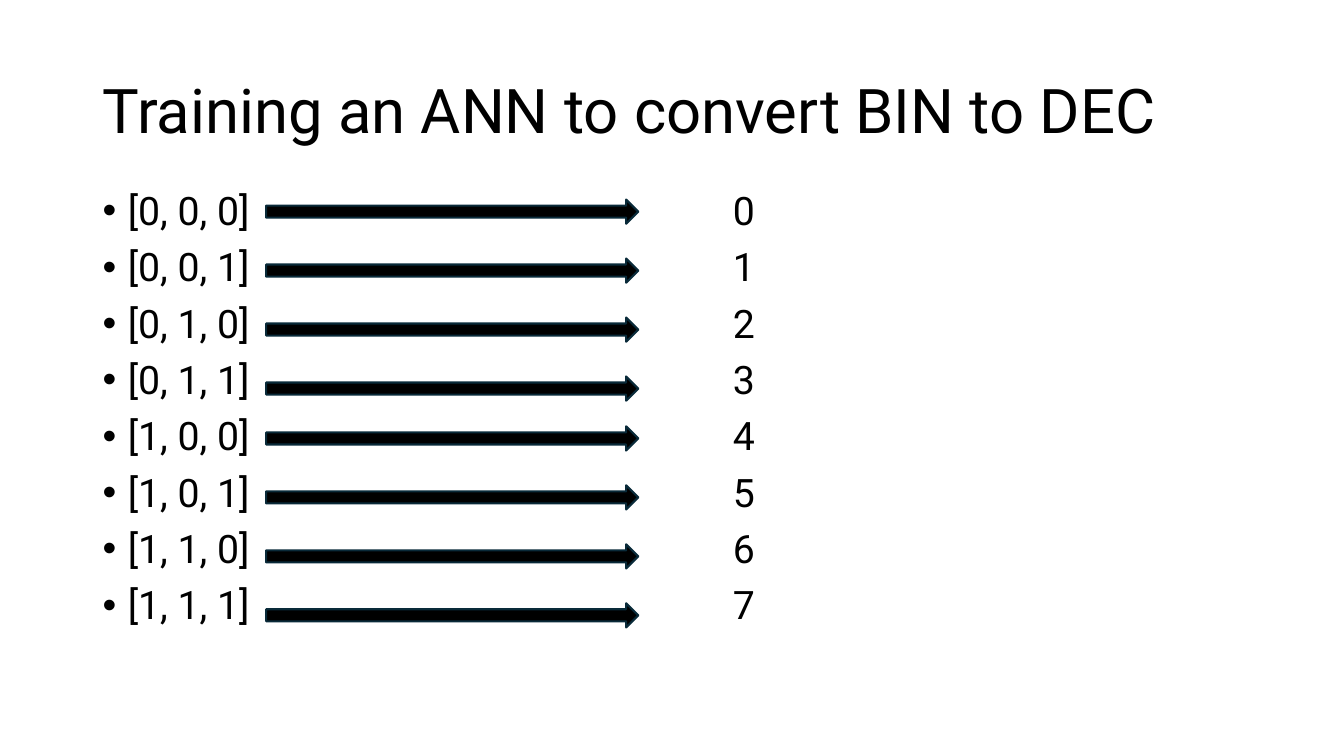
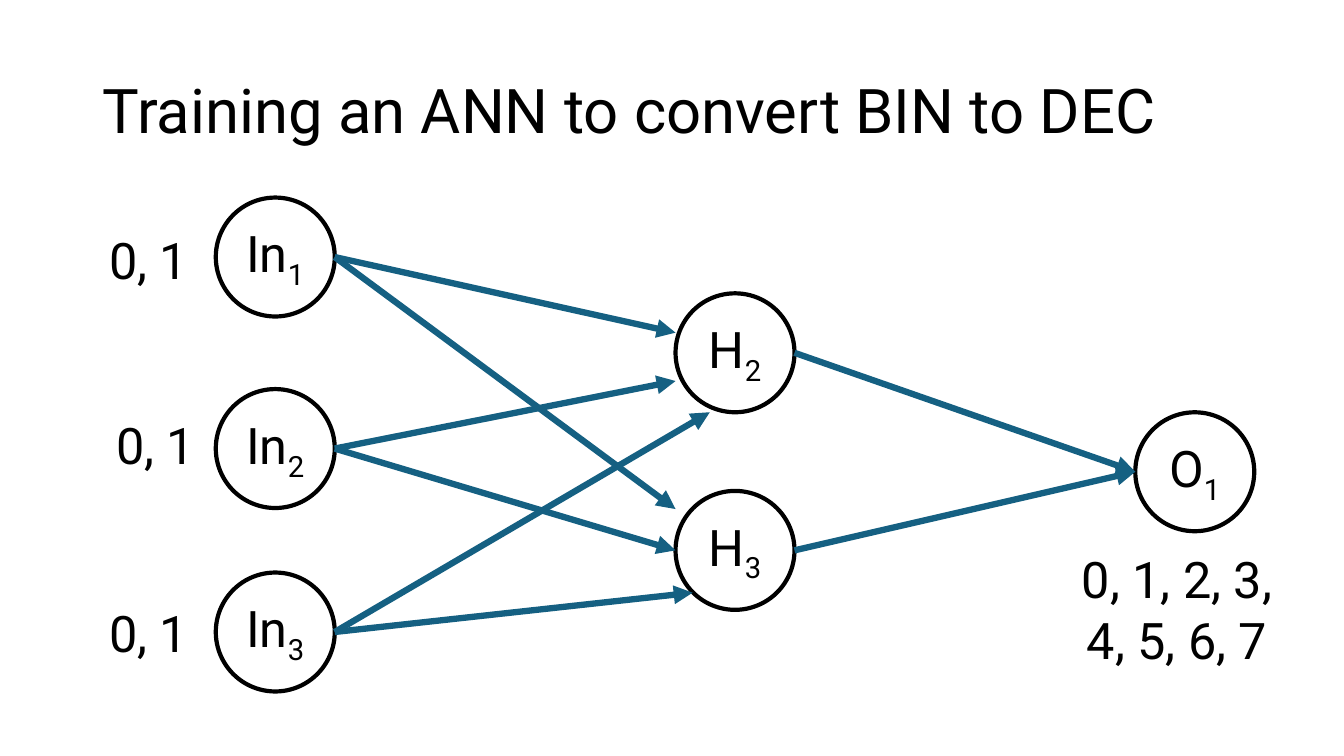
from itertools import product

from pptx import Presentation
from pptx.dml.color import RGBColor
from pptx.enum.shapes import MSO_CONNECTOR, MSO_SHAPE
from pptx.enum.text import MSO_ANCHOR as Anchor, MSO_AUTO_SIZE as AutoSize, PP_ALIGN as Align
from pptx.oxml.ns import qn
from pptx.util import Inches, Pt
from lxml.etree import SubElement

FONT = "Roboto"
BLACK = RGBColor(0x00, 0x00, 0x00)
WHITE = RGBColor(0xFF, 0xFF, 0xFF)
NAVY = RGBColor(0x09, 0x2A, 0x39)
TEAL = RGBColor(0x15, 0x60, 0x82)
TITLE = "Training an ANN to convert BIN to DEC"
NODE = 1.18
INPUT_X, HIDDEN_X, OUTPUT_X = 2.14, 6.7, 11.26

NODES = {
    "In1": (INPUT_X, 1.96),
    "In2": (INPUT_X, 3.86),
    "In3": (INPUT_X, 5.68),
    "H2": (HIDDEN_X, 2.91),
    "H3": (HIDDEN_X, 4.87),
    "O1": (OUTPUT_X, 4.09),
}
LINKS = [
    ("In1", (6.7, 3.3)),
    ("In1", (6.7, 5.05)),
    ("In2", (6.7, 3.78)),
    ("In2", (6.7, 5.46)),
    ("In3", (7.04, 4.09)),
    ("In3", (6.87, 5.88)),
    ("H2", (11.26, 4.68)),
    ("H3", (11.26, 4.68)),
]
VALUES = [
    ((0.98, 2.22, 0.99, 0.71), ["0, 1"]),
    ((1.05, 4.06, 0.99, 0.71), ["0, 1"]),
    ((0.98, 5.92, 0.99, 0.71), ["0, 1"]),
    ((10.59, 5.39, 2.17, 1.31), ["0, 1, 2, 3,", "4, 5, 6, 7"]),
]


def add_run(paragraph, text, size):
    """Append a run in the deck's typeface."""
    run = paragraph.add_run()
    run.text = text
    run.font.name = FONT
    run.font.size = Pt(size)
    run.font.color.rgb = BLACK
    return run


def add_text(slide, box, lines, size, wrap=True):
    """Place a text box with one paragraph per line and return its frame."""
    frame = slide.shapes.add_textbox(*map(Inches, box)).text_frame
    frame.word_wrap = wrap
    for index, line in enumerate(lines):
        paragraph = frame.add_paragraph() if index else frame.paragraphs[0]
        add_run(paragraph, line, size)
    return frame


def add_outlined(slide, kind, box, fill, line, weight):
    """Place a preset shape with a solid fill and outline."""
    shape = slide.shapes.add_shape(kind, *map(Inches, box))
    shape.shadow.inherit = False
    shape.fill.solid()
    shape.fill.fore_color.rgb = fill
    shape.line.color.rgb = line
    shape.line.width = Pt(weight)
    return shape


def add_titled_slide(deck):
    """Add a blank slide carrying the shared title."""
    slide = deck.slides.add_slide(deck.slide_layouts[6])
    frame = add_text(slide, (0.92, 0.4, 11.5, 1.45), [TITLE], 44)
    frame.vertical_anchor = Anchor.MIDDLE
    frame.paragraphs[0].line_spacing = 0.9
    return slide


def add_bullet(paragraph):
    """Give a paragraph a hanging round bullet."""
    properties = paragraph._p.get_or_add_pPr()
    properties.set("marL", str(Inches(0.25)))
    properties.set("indent", str(Inches(-0.25)))
    SubElement(properties, qn("a:buFont")).set("typeface", "Arial")
    SubElement(properties, qn("a:buChar")).set("char", "•")


def add_column(slide, box, lines):
    """Place one column of the conversion list."""
    frame = add_text(slide, box, lines, 28)
    for paragraph in frame.paragraphs:
        paragraph.line_spacing = 0.9
        paragraph.space_before = Pt(10)
    return frame


def add_conversions(slide, left, top):
    """Map each three-bit pattern to its decimal value."""
    patterns = [str(list(bits)) for bits in product((0, 1), repeat=3)]
    decimals = [str(number) for number in range(len(patterns))]
    binary = add_column(slide, (left, top, 2, 4.91), patterns)
    for paragraph in binary.paragraphs:
        add_bullet(paragraph)
    add_column(slide, (left + 6.25, top, 1, 4.91), decimals)
    for half, row in product(range(2), range(4)):
        arrow_top = top + 0.13 + half * 2.25 + row * 0.585
        add_outlined(slide, MSO_SHAPE.RIGHT_ARROW, (left + 1.72, arrow_top, 3.69, 0.24),
                     BLACK, NAVY, 1.5)


def add_neuron(slide, label, left, top):
    """Draw a neuron whose label ends in a subscript number."""
    neuron = add_outlined(slide, MSO_SHAPE.OVAL, (left, top, NODE, NODE), WHITE, BLACK, 3)
    frame = neuron.text_frame
    frame.vertical_anchor = Anchor.MIDDLE
    paragraph = frame.paragraphs[0]
    paragraph.alignment = Align.CENTER
    add_run(paragraph, label[:-1], 36)
    subscript = add_run(paragraph, label[-1], 36)
    subscript.font._element.set("baseline", "-25000")


def add_link(slide, source, target):
    """Draw an arrow from the right edge of a neuron to a point."""
    left, top = NODES[source]
    ends = (left + NODE, top + NODE / 2, *target)
    link = slide.shapes.add_connector(MSO_CONNECTOR.STRAIGHT, *map(Inches, ends))
    link.line.color.rgb = TEAL
    link.line.width = Pt(4.5)
    SubElement(link.line._get_or_add_ln(), qn("a:tailEnd")).set("type", "triangle")
    SubElement(link._element.spPr, qn("a:effectLst"))


def add_values(slide, box, lines):
    """Write the values a neuron can take."""
    frame = add_text(slide, box, lines, 36, wrap=False)
    frame.auto_size = AutoSize.SHAPE_TO_FIT_TEXT
    for paragraph in frame.paragraphs:
        paragraph.alignment = Align.CENTER


def add_network(slide):
    """Draw the neurons, their links and their possible values."""
    for label, (left, top) in NODES.items():
        add_neuron(slide, label, left, top)
    for source, target in LINKS:
        add_link(slide, source, target)
    for box, lines in VALUES:
        add_values(slide, box, lines)


def main():
    """Build and save the deck."""
    deck = Presentation()
    deck.slide_width, deck.slide_height = Inches(13.33), Inches(7.5)
    add_conversions(add_titled_slide(deck), 0.92, 1.85)
    add_network(add_titled_slide(deck))
    deck.save("out.pptx")


if __name__ == "__main__":
    main()
